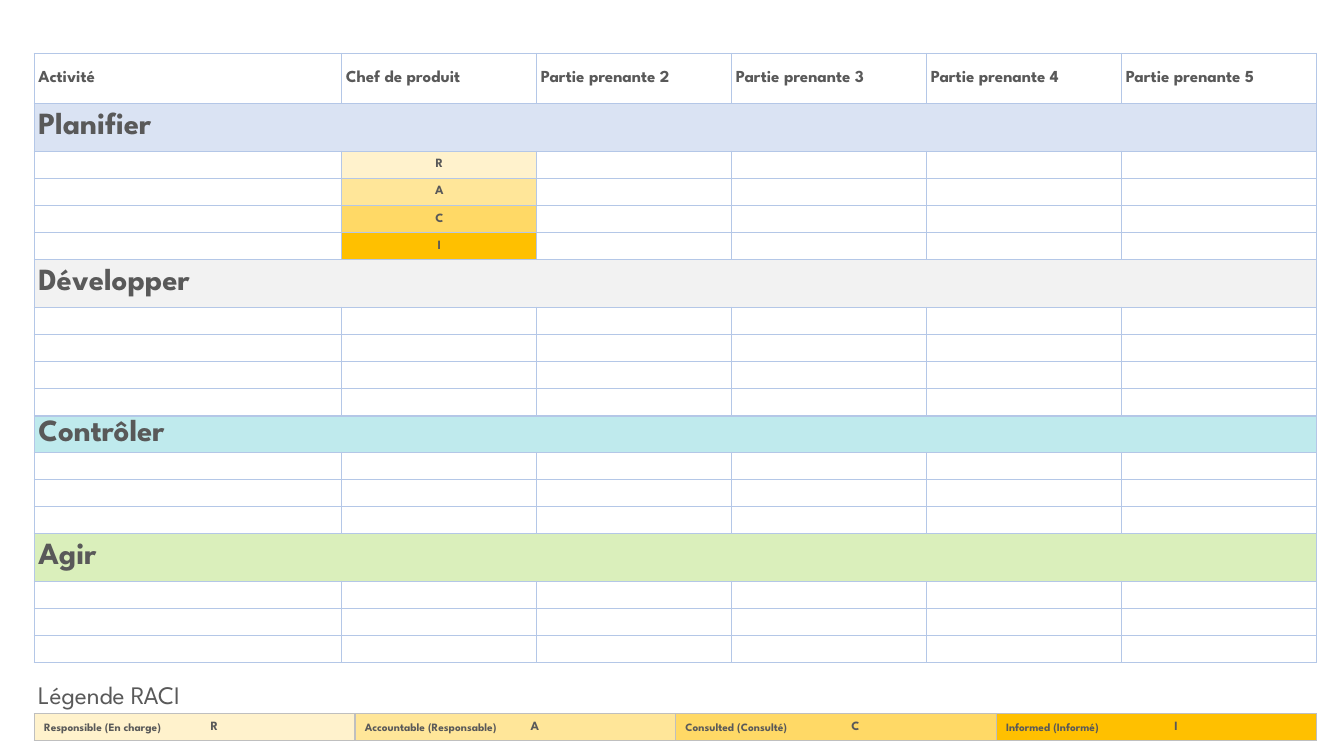
from dataclasses import dataclass

from lxml import etree
from pptx import Presentation
from pptx import util as u
from pptx.dml.color import RGBColor
from pptx.enum import text
from pptx.oxml.ns import qn

FONT = "League Spartan"
INK = "595959"
WHITE = "FFFFFF"

# Grid, in inches
LEFT, WIDTH = 0.34, 12.72
ACTIVITY_WIDTH = 3.05
ROW = 0.27
CELL_MARGIN = 0.04


@dataclass
class Phase:
    name: str
    fill: str
    height: float
    activities: int


@dataclass
class Role:
    letter: str
    label: str
    fill: str


PHASES = [
    Phase("Planifier", "DAE3F3", 0.47, 4),
    Phase("Développer", "F2F2F2", 0.47, 4),
    Phase("Contrôler", "BFEAED", 0.34, 3),
    Phase("Agir", "DAEFBB", 0.47, 3),
]
ROLES = [
    Role("R", "Responsible (En charge)", "FFF2CC"),
    Role("A", "Accountable (Responsable)", "FFE699"),
    Role("C", "Consulted (Consulté)", "FFD966"),
    Role("I", "Informed (Informé)", "FFC000"),
]
HEADERS = ["Activité", "Chef de produit"] + [f"Partie prenante\u00a0{n}" for n in range(2, 6)]


def color(value: str) -> RGBColor:
    return RGBColor.from_string(value)


def format_runs(para, size: float, bold: bool) -> None:
    for span in para.runs:
        span.font.name = FONT
        span.font.size = u.Pt(size)
        span.font.bold = bold
        span.font.color.rgb = color(INK)


def add_grid(page, top: float, widths: list[float], heights: list[float], border: str):
    """Add a plain white table with thin borders and small empty cells."""
    frame = page.shapes.add_table(len(heights), len(widths), u.Inches(LEFT), u.Inches(top),
                                  u.Inches(sum(widths)), u.Inches(sum(heights)))
    table = frame.table
    table.first_row = table.horz_banding = False
    for column, width in zip(table.columns, widths):
        column.width = u.Inches(width)
    for row, height in zip(table.rows, heights):
        row.height = u.Inches(height)
    for cell in table.iter_cells():
        cell.margin_left = cell.margin_right = u.Inches(CELL_MARGIN)
        cell.margin_top = cell.margin_bottom = u.Inches(CELL_MARGIN)
        cell.vertical_anchor = text.MSO_ANCHOR.MIDDLE
        properties = cell._tc.get_or_add_tcPr()
        for side in ("a:lnL", "a:lnR", "a:lnT", "a:lnB"):
            line = etree.SubElement(properties, qn(side), w=str(u.Pt(1)))
            solid = etree.SubElement(line, qn("a:solidFill"))
            etree.SubElement(solid, qn("a:srgbClr"), val=border)
        cell.fill.solid()
        cell.fill.fore_color.rgb = color(WHITE)
        etree.SubElement(cell.text_frame.paragraphs[0]._p, qn("a:endParaRPr"), sz="900")
    return table


def fill_cell(cell, words: str, size: float, fill: str = WHITE, centered: bool = False) -> None:
    para = cell.text_frame.paragraphs[0]
    para.text = words
    format_runs(para, size, True)
    if centered:
        para.alignment = text.PP_ALIGN.CENTER
    cell.fill.fore_color.rgb = color(fill)


def add_label(page, words: str, left: float, top: float, width: float, height: float,
              size: float, bold: bool) -> None:
    box = page.shapes.add_textbox(u.Inches(left), u.Inches(top), u.Inches(width), u.Inches(height))
    box.text_frame.word_wrap = True
    box.text_frame.text = words
    format_runs(box.text_frame.paragraphs[0], size, bold)


def add_matrix(page) -> None:
    heights = [0.5]
    for phase in PHASES:
        heights += [phase.height] + [ROW] * phase.activities
    partners = len(HEADERS) - 1
    widths = [ACTIVITY_WIDTH] + [(WIDTH - ACTIVITY_WIDTH) / partners] * partners
    table = add_grid(page, 0.53, widths, heights, "B4C7E7")

    for column, header in enumerate(HEADERS):
        fill_cell(table.cell(0, column), header, 12)

    # Phase bands span the whole width
    row = 1
    for phase in PHASES:
        band = table.cell(row, 0)
        band.merge(table.cell(row, partners))
        fill_cell(band, phase.name, 22, phase.fill)
        row += 1 + phase.activities

    # Sample roles in the first phase
    for row, role in enumerate(ROLES, start=2):
        fill_cell(table.cell(row, 1), role.letter, 9, role.fill, centered=True)


def add_legend(page) -> None:
    step = WIDTH / len(ROLES)
    table = add_grid(page, 7.08, [step] * len(ROLES), [ROW], "BFBFBF")
    for column, role in enumerate(ROLES):
        cell = table.cell(0, column)
        fill_cell(cell, role.letter, 9, role.fill, centered=True)
        indent = cell.text_frame.paragraphs[0]._p.get_or_add_pPr()
        indent.set("marL", str(u.Inches(0.39)))
        add_label(page, role.label, LEFT + column * step, 7.1, 3.16, 0.24, 8, True)
    add_label(page, "Légende RACI", 0.28, 6.69, 5.14, 0.4, 18, False)


def main() -> None:
    deck = Presentation()
    deck.slide_width, deck.slide_height = u.Inches(13.33), u.Inches(7.5)
    page = deck.slides.add_slide(deck.slide_layouts[6])
    add_matrix(page)
    add_legend(page)
    deck.save("out.pptx")


if __name__ == "__main__":
    main()
